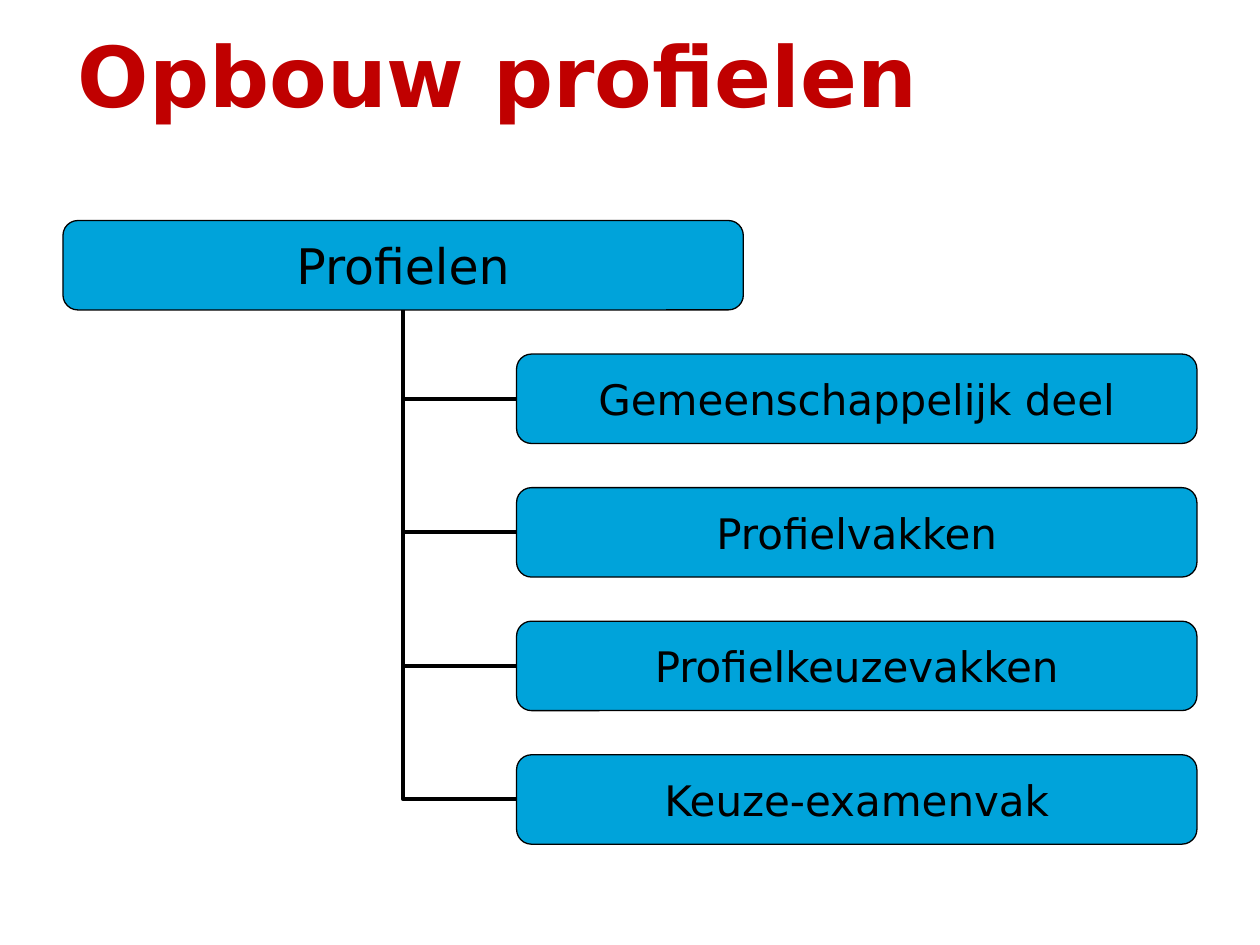
from lxml import etree
from pptx import Presentation
from pptx.dml.color import RGBColor
from pptx.enum.shapes import MSO_CONNECTOR as Connector, MSO_SHAPE as Shape
from pptx.enum.text import MSO_ANCHOR as Anchor, PP_ALIGN as Align
from pptx.oxml.ns import qn
from pptx.util import Inches, Pt

COLORS = {"title": "C00000", "box": "00A3DA", "ink": "000000"}
FONT = "DejaVu Sans"
BOX_WIDTH, BOX_HEIGHT = 5.4, 0.71
ROOT_LEFT, CHILD_LEFT = 0.5, 4.1
FIRST_TOP, STEP = 1.75, 1.06
BOTTOM, LEFT = 2, 1  # connection sites
PARTS = ["Gemeenschappelijk deel", "Profielvakken", "Profielkeuzevakken", "Keuze-examenvak"]


def write(frame, text, size, color, bold=False):
    frame.vertical_anchor = Anchor.MIDDLE
    para = frame.paragraphs[0]
    span = para.add_run()
    span.text = text
    formats = {"name": FONT, "size": Pt(size), "bold": bold}
    for name, value in formats.items():
        setattr(span.font, name, value)
    span.font.color.rgb = RGBColor.from_string(COLORS[color])
    return para


deck = Presentation()
deck.slide_width, deck.slide_height = Inches(10), Inches(7.5)
page = deck.slides.add_slide(deck.slide_layouts[6])

title = page.shapes.add_textbox(Inches(0.52), Inches(0.01), Inches(9), Inches(1.25))
title.text_frame.word_wrap = True
write(title.text_frame, "Opbouw profielen", 48, "title", bold=True).line_spacing = 0.9

# The root box, with its parts below it in an indented column
boxes = []
for row, label in enumerate(["Profielen"] + PARTS):
    left = CHILD_LEFT if row else ROOT_LEFT
    box = page.shapes.add_shape(
        Shape.ROUNDED_RECTANGLE, Inches(left), Inches(FIRST_TOP + row * STEP),
        Inches(BOX_WIDTH), Inches(BOX_HEIGHT))
    box.adjustments[0] = 0.167
    box.shadow.inherit = False
    box.fill.solid()
    box.fill.fore_color.rgb = RGBColor.from_string(COLORS["box"])
    box.line.color.rgb = RGBColor.from_string(COLORS["ink"])
    box.line.width = Pt(0.75)
    frame = box.text_frame
    frame.word_wrap = False
    for side in ("left", "top", "right", "bottom"):
        setattr(frame, f"margin_{side}", 0)
    write(frame, label, 24 if row else 28, "ink").alignment = Align.CENTER
    boxes.append(box)

# One-bend branches from each part to the root, placed behind the boxes
root, *parts = boxes
for part in reversed(parts):
    branch = page.shapes.add_connector(Connector.ELBOW, 0, 0, 0, 0)
    branch.begin_connect(part, LEFT)
    branch.end_connect(root, BOTTOM)
    branch.line.color.rgb = RGBColor.from_string(COLORS["ink"])
    branch.line.width = Pt(2.25)
    properties = branch._element.spPr
    properties.find(qn("a:prstGeom")).set("prst", "bentConnector2")
    etree.SubElement(properties, qn("a:effectLst"))
    root._element.addprevious(branch._element)

deck.save("out.pptx")
